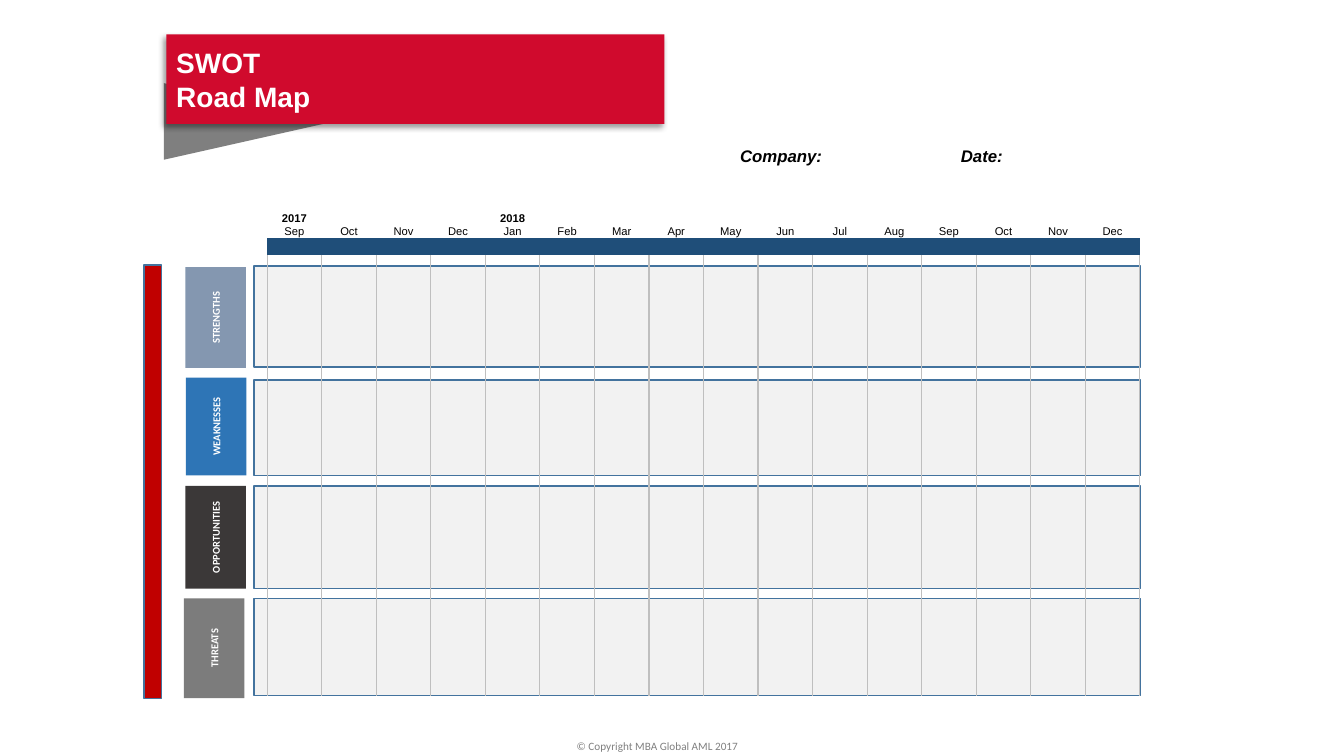
from lxml import etree
from pptx import Presentation
from pptx.dml.color import RGBColor
from pptx.enum.shapes import MSO_SHAPE
from pptx.enum.text import MSO_ANCHOR, PP_ALIGN
from pptx.oxml import parse_xml
from pptx.oxml.ns import nsdecls, qn
from pptx.util import Pt

RECT, TRIANGLE = MSO_SHAPE.RECTANGLE, MSO_SHAPE.FLOWCHART_EXTRACT
MIDDLE, BOTTOM = MSO_ANCHOR.MIDDLE, MSO_ANCHOR.BOTTOM
LEFT, CENTER = PP_ALIGN.LEFT, PP_ALIGN.CENTER

PX = 9144
WHITE = RGBColor(0xFF, 0xFF, 0xFF)
BLACK = RGBColor(0x00, 0x00, 0x00)
LANE_GRAY = RGBColor(0xF2, 0xF2, 0xF2)
EDGE_BLUE = RGBColor(0x43, 0x73, 0x9E)
NAVY = RGBColor(0x1F, 0x4E, 0x79)
GRID_GRAY = RGBColor(0xBF, 0xBF, 0xBF)
SLATE = RGBColor(0x84, 0x97, 0xB0)
BLUE = RGBColor(0x2E, 0x75, 0xB6)
CHARCOAL = RGBColor(0x3B, 0x38, 0x38)
MID_GRAY = RGBColor(0x7C, 0x7C, 0x7C)
FOLD_GRAY = RGBColor(0x7F, 0x7F, 0x7F)
FOOTER_GRAY = RGBColor(0x80, 0x80, 0x80)
DARK_RED = RGBColor(0xC0, 0x00, 0x00)
BANNER_RED = RGBColor(0xD0, 0x0A, 0x2D)

prs = Presentation()
prs.slide_width, prs.slide_height = 1333 * PX, 750 * PX
slide = prs.slides.add_slide(prs.slide_layouts[6])


def add_block(box, fill, edge=None, kind=RECT):
    block = slide.shapes.add_shape(kind, *(n * PX for n in box))
    block.shadow.inherit = False
    block.fill.solid()
    block.fill.fore_color.rgb = fill
    if edge is None:
        block.line.fill.background()
    else:
        block.line.color.rgb = edge
        block.line.width = Pt(1)
    return block


def write(paragraph, text, align, size, face, color, bold=False, italic=False):
    paragraph.alignment = align
    run = paragraph.add_run()
    run.text = text
    for name, value in {"size": Pt(size), "name": face, "bold": bold, "italic": italic}.items():
        setattr(run.font, name, value)
    run.font.color.rgb = color


LANES = [
    ("STRENGTHS", SLATE, 184, 265, 100, 264, 100),
    ("WEAKNESSES", BLUE, 184, 375, 97, 377, 95),
    ("OPPORTUNITIES", CHARCOAL, 184, 482, 102, 482, 102),
    ("THREATS", MID_GRAY, 182, 594, 99, 594, 96),
]
for _, _, _, _, _, lane_top, lane_height in LANES:
    add_block((252, lane_top, 879, lane_height), LANE_GRAY, EDGE_BLUE)

MONTHS = "Sep Oct Nov Dec Jan Feb Mar Apr May Jun Jul Aug Sep Oct Nov Dec".split()
YEARS = {0: "2017", 4: "2018"}
ROW_HEIGHTS = (34, 17, 438)
CALENDAR_WIDTH = 866
frame = slide.shapes.add_table(
    len(ROW_HEIGHTS), len(MONTHS), 265 * PX, 202 * PX, CALENDAR_WIDTH * PX, sum(ROW_HEIGHTS) * PX)
calendar = frame.table
calendar.first_row = calendar.horz_banding = False
calendar._tbl.tblPr.find(qn("a:tableStyleId")).text = "{2D5ABB26-0587-4C30-8999-92F81FD0307C}"
for row, height in zip(calendar.rows, ROW_HEIGHTS):
    row.height = height * PX
for i, month in enumerate(MONTHS):
    calendar.columns[i].width = CALENDAR_WIDTH * PX // len(MONTHS)
    month_cell, band_cell, grid_cell = (calendar.cell(r, i) for r in range(3))
    for cell in (month_cell, band_cell, grid_cell):
        cell.margin_left = cell.margin_right = cell.margin_top = cell.margin_bottom = 0
        cell.vertical_anchor = BOTTOM
        cell.fill.background()
    for cell in (band_cell, grid_cell):
        cell.text_frame.paragraphs[0]._p.get_or_add_endParaRPr().set("sz", "800")
    band_cell.fill.solid()
    band_cell.fill.fore_color.rgb = NAVY
    month_line = month_cell.text_frame.paragraphs[0]
    if i in YEARS:
        write(month_line, YEARS[i], CENTER, 8, "Arial", BLACK, bold=True)
        month_line = month_cell.text_frame.add_paragraph()
    write(month_line, month, CENTER, 8, "Arial", BLACK)
    cell_props = grid_cell._tc.get_or_add_tcPr()
    for position, side in enumerate(("lnL", "lnR")):
        cell_props.insert(position, parse_xml(
            f'<a:{side} {nsdecls("a")} w="12700"><a:solidFill>'
            f'<a:srgbClr val="{GRID_GRAY}"/></a:solidFill></a:{side}>'))

TAB_WIDTH = 60
for label, color, left, top, height, _, _ in LANES:
    shift = (height - TAB_WIDTH) // 2
    lane_tab = add_block((left - shift, top + shift, height, TAB_WIDTH), color)
    lane_tab.rotation = 270
    lane_tab.text_frame.word_wrap = False
    lane_tab.text_frame.vertical_anchor = MIDDLE
    write(lane_tab.text_frame.paragraphs[0], label, CENTER, 7.5, "Calibri", WHITE, bold=True)

details = slide.shapes.add_textbox(727 * PX, 136 * PX, 389 * PX, 40 * PX).text_frame
details.word_wrap = True
details.vertical_anchor = MIDDLE
details.margin_left = details.margin_right = 7 * PX
details.margin_top = details.margin_bottom = 4 * PX
details_line = details.paragraphs[0]
details_line.line_spacing = 0.9
tab_stops = etree.SubElement(details_line._p.get_or_add_pPr(), qn("a:tabLst"))
etree.SubElement(tab_stops, qn("a:tab"), pos=str(219 * PX), algn="l")
write(details_line, "Company:\tDate:", LEFT, 12, "Arial", BLACK, bold=True, italic=True)

add_block((143, 263, 17, 430), DARK_RED, EDGE_BLUE)

banner_fold = add_block((209, 36, 76, 169), FOLD_GRAY, kind=TRIANGLE)
banner_fold.rotation = 90
banner = add_block((165, 34, 494, 89), BANNER_RED)
banner_effects = banner._element.spPr.find(qn("a:effectLst"))
banner_effects.append(parse_xml(
    f'<a:outerShdw {nsdecls("a")} blurRad="50800" dist="38100" dir="8100000" algn="tr" '
    'rotWithShape="0"><a:srgbClr val="000000"><a:alpha val="40000"/></a:srgbClr></a:outerShdw>'))
title = banner.text_frame
title.word_wrap = True
title.vertical_anchor = MIDDLE
write(title.paragraphs[0], "SWOT", LEFT, 20, "Arial", WHITE, bold=True)
write(title.add_paragraph(), "Road Map", LEFT, 20, "Arial", WHITE, bold=True)

footer = slide.shapes.add_textbox(562 * PX, 729 * PX, 210 * PX, 24 * PX).text_frame
footer.word_wrap = False
write(footer.paragraphs[0], "© Copyright MBA Global AML 2017", LEFT, 8, "Calibri", FOOTER_GRAY)

prs.save("out.pptx")
